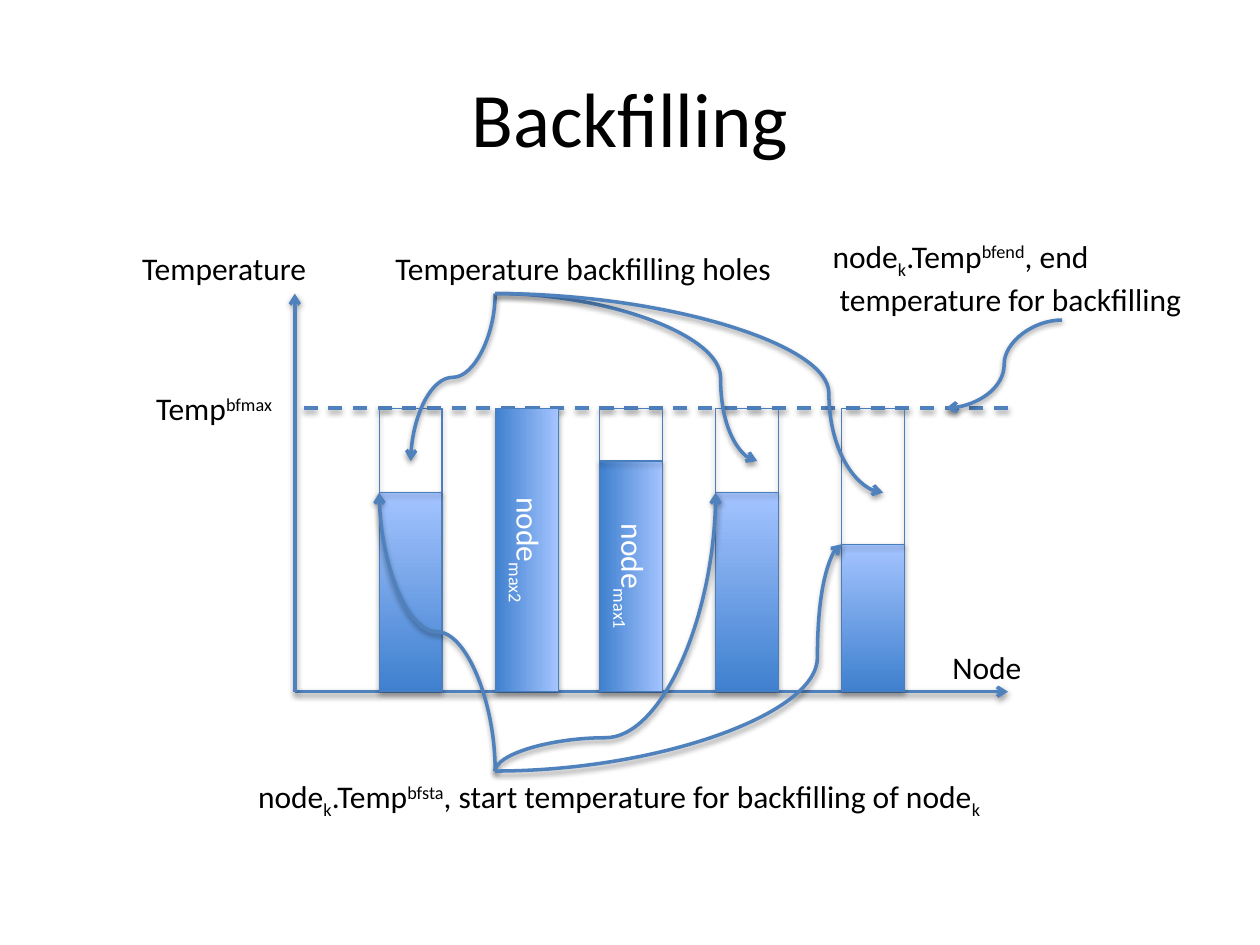
from lxml import etree
from pptx import Presentation
from pptx import util as u
from pptx.dml.color import RGBColor
from pptx.enum import dml, shapes, text
from pptx.oxml import parse_xml
from pptx.oxml.ns import nsdecls, qn

PX = 9144  # 100 px to the inch
BLUE, EDGE = "4F81BD", "4B7EBC"
DARK, LIGHT = "3F80CE", "A4C4FF"
SUB, SUP = -25000, 30000

AXIS_X, BASE, LIMIT, AXIS_END = 234, 549, 324, 800
BAR_WIDTH = 50
BARS = [  # left, top of the filled part, index in the label
    (301, 391, None),
    (393, LIMIT, "max2"),
    (476, 366, "max1"),
    (568, 391, None),
    (668, 432, None),
]
HOLES_START = (393, 233)
STARTS_START = (393, 612)


def px(value):
    return u.Emu(round(value * PX))


def color(value):
    return RGBColor.from_string(value)


def add_shadow(shape, opacity, distance):
    shape._element.spPr.append(parse_xml(
        f'<a:effectLst {nsdecls("a")}><a:outerShdw blurRad="40000" dist="{distance}" '
        'dir="5400000" rotWithShape="0"><a:srgbClr val="000000">'
        f'<a:alpha val="{opacity * 1000}"/></a:srgbClr></a:outerShdw></a:effectLst>'))


def write(frame, paragraphs, size=18, fill="000000", align=text.PP_ALIGN.LEFT):
    """Each paragraph is a list of runs, given as (words, baseline)."""
    for index, runs in enumerate(paragraphs):
        paragraph = frame.paragraphs[0] if index == 0 else frame.add_paragraph()
        paragraph.alignment = align
        for words, baseline in runs:
            run = paragraph.add_run()
            run.text = words
            run.font.name = "Calibri"
            run.font.size = u.Pt(size)
            run.font.color.rgb = color(fill)
            if baseline:
                run._r.get_or_add_rPr().set("baseline", str(baseline))


def add_label(slide, left, top, width, height, *paragraphs):
    frame = slide.shapes.add_textbox(px(left), px(top), px(width), px(height)).text_frame
    frame.word_wrap = False
    frame.auto_size = text.MSO_AUTO_SIZE.SHAPE_TO_FIT_TEXT
    write(frame, paragraphs)


def add_title(slide, words):
    frame = slide.shapes.add_textbox(px(50), px(30), px(900), px(125)).text_frame
    frame.word_wrap = True
    frame.vertical_anchor = text.MSO_ANCHOR.MIDDLE
    write(frame, [[(words, 0)]], size=44, align=text.PP_ALIGN.CENTER)


def add_box(slide, left, top, width, height):
    box = slide.shapes.add_shape(
        shapes.MSO_SHAPE.RECTANGLE, px(left), px(top), px(width), px(height))
    box.shadow.inherit = False
    box._element.spPr.remove(box._element.spPr.find(qn("a:effectLst")))
    box.fill.background()
    box.line.color.rgb = color(EDGE)
    box.line.width = u.Pt(0.75)
    add_shadow(box, 35, 23000)
    return box


def add_bar(slide, left, top, label):
    """Draw the filled part; a labelled bar is a wide box turned upright."""
    height = BASE - top
    if label:
        middle_x, middle_y = left + BAR_WIDTH / 2, top + height / 2
        bar = add_box(slide, middle_x - height / 2, middle_y - BAR_WIDTH / 2,
                      height, BAR_WIDTH)
        bar.rotation = 90
        bar.text_frame.vertical_anchor = text.MSO_ANCHOR.MIDDLE
        write(bar.text_frame, [[("node", 0), (label, SUB)]], fill="FFFFFF",
              align=text.PP_ALIGN.CENTER)
    else:
        bar = add_box(slide, left, top, BAR_WIDTH, height)
    bar.fill.gradient()
    bar.fill.gradient_angle = 90
    for stop, position, shade in zip(bar.fill.gradient_stops, (0, 1), (DARK, LIGHT)):
        stop.position = position
        stop.color.rgb = color(shade)


def add_line(slide, begin, end, kind=shapes.MSO_CONNECTOR.STRAIGHT, arrow=True):
    line = slide.shapes.add_connector(kind, *(px(value) for value in (*begin, *end)))
    line.line.color.rgb = color(BLUE)
    line.line.width = u.Pt(2)
    if arrow:
        etree.SubElement(line.line._get_or_add_ln(), qn("a:tailEnd"), type="arrow")
    add_shadow(line, 38, 20000)
    return line


def add_curve(slide, begin, end, bend=0.5, upright=False):
    """Bend at a share of the way; an upright curve leaves vertically."""
    curve = add_line(slide, begin, end, shapes.MSO_CONNECTOR.CURVE)
    properties = curve._element.spPr
    guides = properties.find(qn("a:prstGeom")).get_or_add_avLst()
    etree.SubElement(guides, qn("a:gd"), name="adj1", fmla=f"val {round(bend * 100000)}")
    if upright:
        dx, dy = end[0] - begin[0], end[1] - begin[1]
        curve.left = px((begin[0] + end[0] - abs(dy)) / 2)
        curve.top = px((begin[1] + end[1] - abs(dx)) / 2)
        curve.width, curve.height = px(abs(dy)), px(abs(dx))
        frame = properties.find(qn("a:xfrm"))
        frame.set("rot", str((90 if dy > 0 else 270) * 60000))
        frame.set("flipH", "0")
        frame.set("flipV", str(int(dx * dy > 0)))


def main():
    presentation = Presentation()
    presentation.slide_width, presentation.slide_height = px(1000), px(750)
    slide = presentation.slides.add_slide(presentation.slide_layouts[6])
    add_title(slide, "Backfilling")

    add_line(slide, (AXIS_X, BASE), (AXIS_END, BASE))
    add_line(slide, (AXIS_X, BASE), (AXIS_X, 233))
    limit = add_line(slide, (AXIS_END, LIMIT), (AXIS_X, LIMIT), arrow=False)
    limit.line.dash_style = dml.MSO_LINE.DASH

    for left, top, label in BARS:
        add_bar(slide, left, top, label)
        if top > LIMIT:
            add_box(slide, left, LIMIT, BAR_WIDTH, top - LIMIT)

    add_curve(slide, HOLES_START, (326, 366), upright=True)
    add_curve(slide, HOLES_START, (601, 366), bend=0.86)
    add_curve(slide, HOLES_START, (701, 391), bend=0.86)
    add_curve(slide, STARTS_START, (301, 391), upright=True)
    add_curve(slide, STARTS_START, (568, 391), bend=0.12, upright=True)
    add_curve(slide, STARTS_START, (668, 432), bend=0.93)
    add_curve(slide, (843, 254), (751, LIMIT))

    add_label(slide, 103, 193, 152, 40, [("Temperature", 0)])
    add_label(slide, 114, 304, 119, 40, [("Temp", 0), ("bfmax", SUP)])
    add_label(slide, 746, 509, 76, 40, [("Node", 0)])
    add_label(slide, 304, 193, 322, 40, [("Temperature backfilling holes", 0)])
    node_temperature = [("node", 0), ("k", SUB), (".Temp", 0)]
    add_label(slide, 195, 612, 605, 61, node_temperature + [
        ("bfsta", SUP), (", start temperature for backfilling of node", 0), ("k", SUB)])
    add_label(slide, 651, 183, 300, 71,
              node_temperature + [("bfend", SUP), (", end", 0)],
              [(" temperature for backfilling", 0)])

    presentation.save("out.pptx")


if __name__ == "__main__":
    main()
